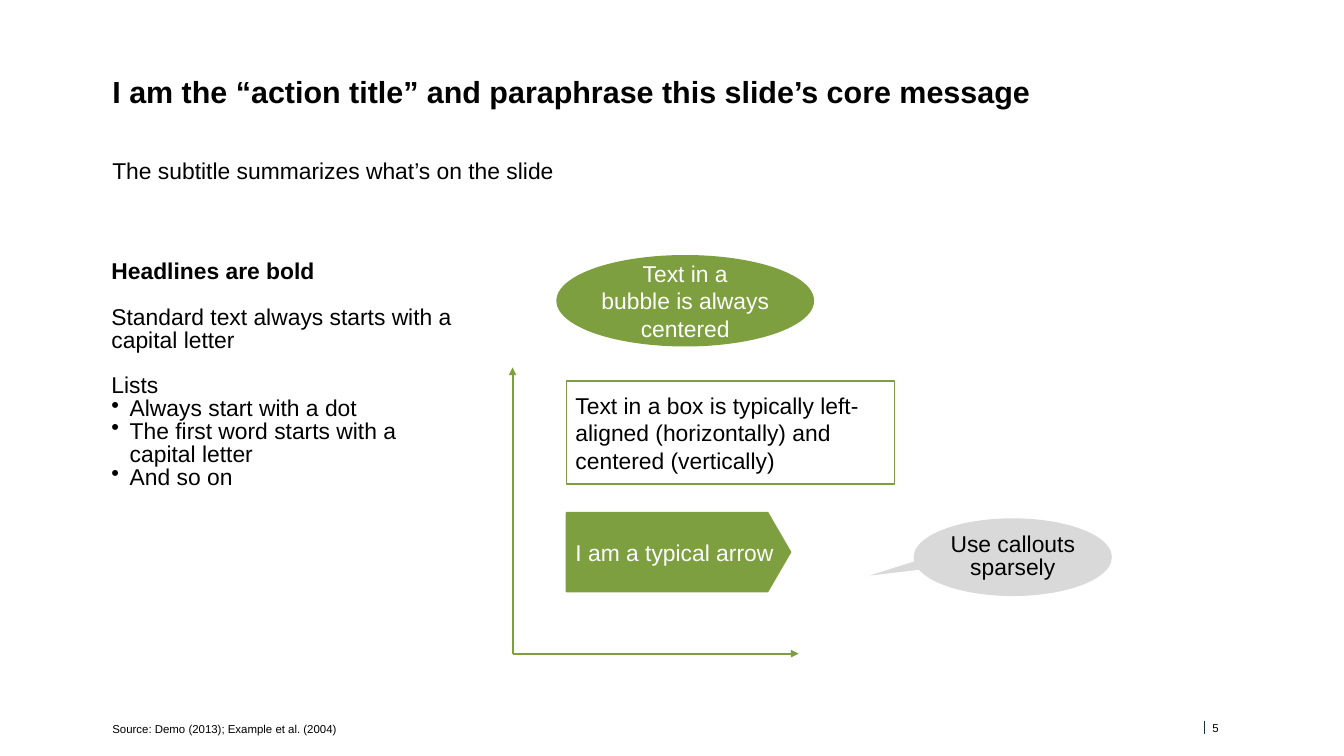
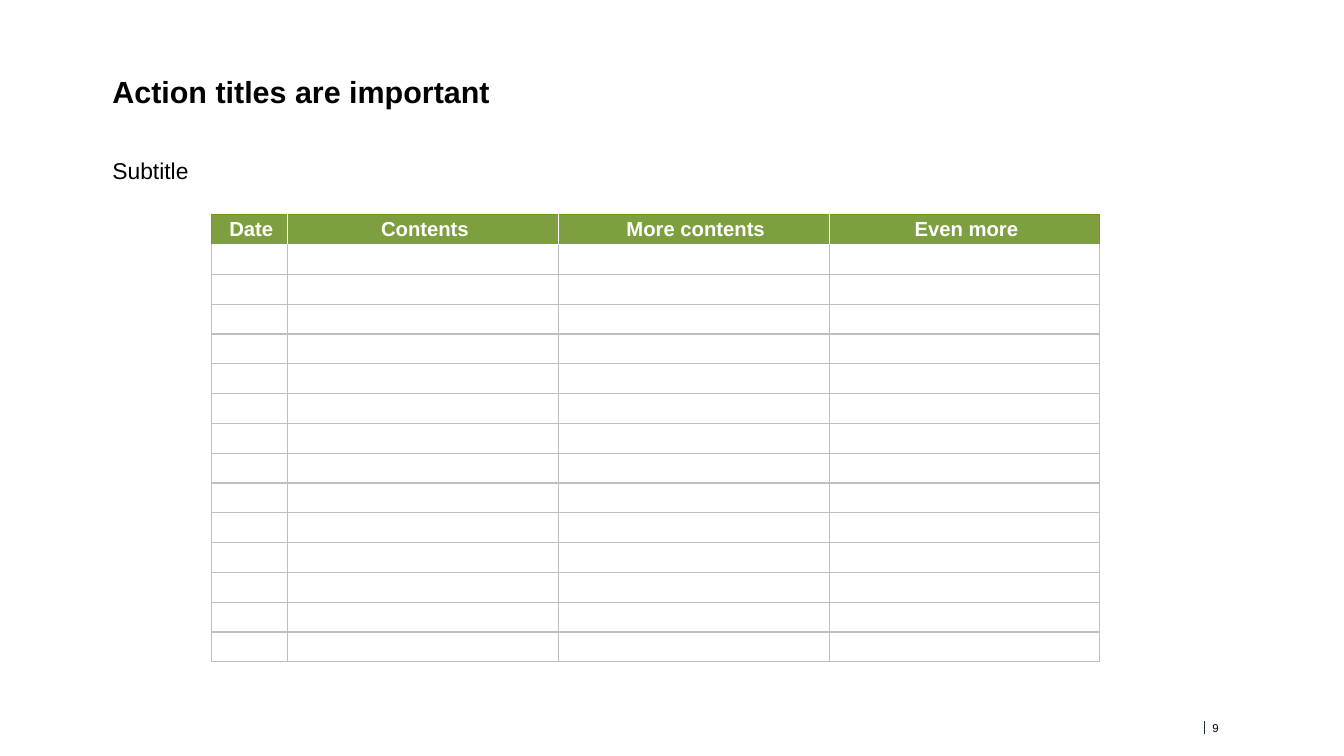
from lxml import etree
from pptx import Presentation, util as u
from pptx.dml.color import RGBColor
from pptx.enum import shapes, text
from pptx.oxml.ns import qn

PX = 9144  # EMU per px, 100 px to the inch
SLIDE_SIZE = (1471, 827)
FONT = "Arial"
COLORS = {
    "black": "000000",
    "white": "FFFFFF",
    "green": "7D9F3F",
    "olive": "77981C",
    "callout": "D9D9D9",
    "grid": "BFBFBF",
    "divider": "172F37",
}
TITLE_BOX = (123, 87, 1223, 67)
SUBTITLE_BOX = (123, 176, 1223, 30)
SOURCE_BOX = (123, 783, 1156, 22)
NUMBER_BOX = (1327, 787, 54, 15)
LEFT, CENTER = text.PP_ALIGN.LEFT, text.PP_ALIGN.CENTER
TOP, MIDDLE, BOTTOM = (text.MSO_ANCHOR.TOP, text.MSO_ANCHOR.MIDDLE,
                       text.MSO_ANCHOR.BOTTOM)


def px(*lengths):
    return [u.Emu(length * PX) for length in lengths]


def rgb(name):
    return RGBColor.from_string(COLORS[name])


def prepare_frame(frame, anchor=TOP, insets=(0, 0, 0, 0)):
    frame.auto_size = text.MSO_AUTO_SIZE.NONE
    frame.word_wrap = True
    frame.vertical_anchor = anchor
    (frame.margin_left, frame.margin_top,
     frame.margin_right, frame.margin_bottom) = px(*insets)


def style_paragraph(paragraph, size=18, color="black", bold=False, align=LEFT,
                    leading=None, before=0):
    paragraph.alignment = align
    paragraph.space_before = u.Pt(before)
    if leading:
        paragraph.line_spacing = u.Pt(leading)
    font = paragraph.font
    font.name, font.size, font.bold = FONT, u.Pt(size), bold
    font.color.rgb = rgb(color)


def add_bullet(paragraph, indent=20):
    properties = paragraph._p.get_or_add_pPr()
    properties.set("marL", str(indent * PX))
    properties.set("indent", str(-indent * PX))
    etree.SubElement(properties, qn("a:buChar"), char="•")


def add_label(slide, box, words, anchor=TOP, **style):
    frame = slide.shapes.add_textbox(*px(*box)).text_frame
    prepare_frame(frame, anchor)
    frame.paragraphs[0].text = words
    style_paragraph(frame.paragraphs[0], **style)


def paint(shape, fill, line=None, width=1.5):
    shape.shadow.inherit = False
    shape.fill.solid()
    shape.fill.fore_color.rgb = rgb(fill)
    if line:
        shape.line.color.rgb = rgb(line)
        shape.line.width = u.Pt(width)
    else:
        shape.line.fill.background()


def add_figure(slide, kind, box, words, fill, line=None,
               insets=(0, 0, 0, 0), **style):
    """Add a filled preset shape with vertically centred text."""
    figure = slide.shapes.add_shape(kind, *px(*box))
    paint(figure, fill, line)
    prepare_frame(figure.text_frame, MIDDLE, insets)
    paragraph = figure.text_frame.paragraphs[0]
    paragraph.text = words
    style_paragraph(paragraph, **style)
    return figure


def add_rule(slide, start, end, color, width, arrow=False):
    rule = slide.shapes.add_connector(
        shapes.MSO_CONNECTOR.STRAIGHT, *px(*start, *end))
    rule.line.color.rgb = rgb(color)
    rule.line.width = u.Pt(width)
    properties = rule.element.spPr
    if arrow:
        etree.SubElement(properties.find(qn("a:ln")), qn("a:tailEnd"),
                         type="triangle")
    etree.SubElement(properties, qn("a:effectLst"))


def add_framed_slide(deck, title, subtitle, number):
    """Add a slide with the shared title, subtitle and page number."""
    slide = deck.slides.add_slide(deck.slide_layouts[5])
    heading = slide.shapes.title
    heading.left, heading.top, heading.width, heading.height = px(*TITLE_BOX)
    prepare_frame(heading.text_frame)
    heading.text_frame.text = title
    style_paragraph(heading.text_frame.paragraphs[0], size=24, bold=True,
                    leading=24)
    add_label(slide, SUBTITLE_BOX, subtitle, leading=18)
    add_rule(slide, (1318, 789), (1318, 803), "divider", 0.75)
    add_label(slide, NUMBER_BOX, str(number), size=9, leading=12)
    return slide


def add_guidelines(slide, box):
    frame = slide.shapes.add_textbox(*px(*box)).text_frame
    prepare_frame(frame)
    headline = frame.paragraphs[0]
    headline.text = "Headlines are bold"
    style_paragraph(headline, bold=True, leading=18)
    for words in ("Standard text always starts with a capital letter", "Lists"):
        paragraph = frame.add_paragraph()
        paragraph.text = words
        style_paragraph(paragraph, leading=18, before=18)
    for words in ("Always start with a dot",
                  "The first word starts with a capital letter",
                  "And so on"):
        item = frame.add_paragraph()
        item.text = words
        add_bullet(item)
        style_paragraph(item, leading=18)


def add_callout(slide, box):
    left, top, width, height = box
    tail_points = [(left + x, top + y) for x, y in
                   ((22, 55), (-55, 64), (15, 42))]
    builder = slide.shapes.build_freeform(*tail_points[0], scale=PX)
    builder.add_line_segments(tail_points[1:], close=True)
    paint(builder.convert_to_shape(), "callout", "white", 0)
    add_figure(slide, shapes.MSO_SHAPE.OVAL, box, "Use callouts sparsely",
               "callout", align=CENTER, leading=18)


def add_diagram(slide, box):
    left, top, width, height = box
    bottom, axis = top + height, 313
    add_figure(slide, shapes.MSO_SHAPE.OVAL, (left + 49, top, 280, 98),
               "Text in a\nbubble is always\ncentered", "green", "green",
               color="white", align=CENTER)
    add_figure(slide, shapes.MSO_SHAPE.RECTANGLE,
               (left + 59, top + 137, 359, 113),
               "Text in a box is typically left-aligned (horizontally) "
               "and centered (vertically)",
               "white", "green", insets=(10, 5, 10, 5))
    arrow = add_figure(slide, shapes.MSO_SHAPE.PENTAGON,
                       (left + 59, top + 281, 245, 86),
                       "I am a typical arrow", "green", "green",
                       insets=(10, 5, 0, 5), color="white")
    arrow.adjustments[0] = 0.29
    for end in ((left + axis, bottom), (left, bottom - axis)):
        add_rule(slide, (left, bottom), end, "green", 1.5, arrow=True)
    add_callout(slide, (left + width - 217, top + 287, 217, 85))


def set_borders(cell, **sides):
    """Draw 1 pt borders; sides are L, R, T and B with colour names."""
    properties = cell._tc.get_or_add_tcPr()
    for side, color in sides.items():
        line = etree.SubElement(properties, qn(f"a:ln{side}"),
                                w=str(u.Pt(1)))
        fill = etree.SubElement(line, qn("a:solidFill"))
        etree.SubElement(fill, qn("a:srgbClr"), val=COLORS[color])


def add_schedule(slide, box, headers, date_width, row_count):
    width, height = box[2:]
    last = len(headers) - 1
    table = slide.shapes.add_table(row_count, len(headers),
                                   *px(*box)).table
    table.first_row = table.horz_banding = False
    for index, column in enumerate(table.columns):
        column.width = u.Emu(date_width * PX if index == 0
                             else (width - date_width) * PX // last)
    for r, row in enumerate(table.rows):
        row.height = u.Emu(height * PX // row_count)
        for c, cell in enumerate(row.cells):
            (cell.margin_left, cell.margin_top,
             cell.margin_right, cell.margin_bottom) = px(8, 1, 4, 1)
            cell.vertical_anchor = MIDDLE
            if r == 0:
                cell.text = headers[c]
                set_borders(cell, L="olive" if c == 0 else "white",
                            R="olive" if c == last else "white",
                            T="olive", B="white")
            else:
                set_borders(cell, L="grid", R="grid",
                            T="white" if r == 1 else "grid", B="grid")
            cell.fill.solid()
            cell.fill.fore_color.rgb = rgb("white" if r else "green")
            style_paragraph(cell.text_frame.paragraphs[0], size=16,
                            color="black" if r else "white", bold=r == 0,
                            align=CENTER)


def main():
    deck = Presentation()
    deck.slide_width, deck.slide_height = px(*SLIDE_SIZE)

    style_guide = add_framed_slide(
        deck,
        "I am the “action title” and paraphrase this slide’s core message",
        "The subtitle summarizes what’s on the slide", 5)
    add_label(style_guide, SOURCE_BOX,
              "Source: Demo (2013); Example et al. (2004)",
              BOTTOM, size=9, leading=18)
    add_guidelines(style_guide, (122, 286, 383, 252))
    add_diagram(style_guide, (561, 280, 656, 435))

    schedule = add_framed_slide(deck, "Action titles are important",
                                "Subtitle", 9)
    add_schedule(schedule, (231, 235, 973, 489),
                 ("Date", "Contents", "More contents", "Even more"),
                 date_width=84, row_count=15)
    deck.save("out.pptx")


if __name__ == "__main__":
    main()
